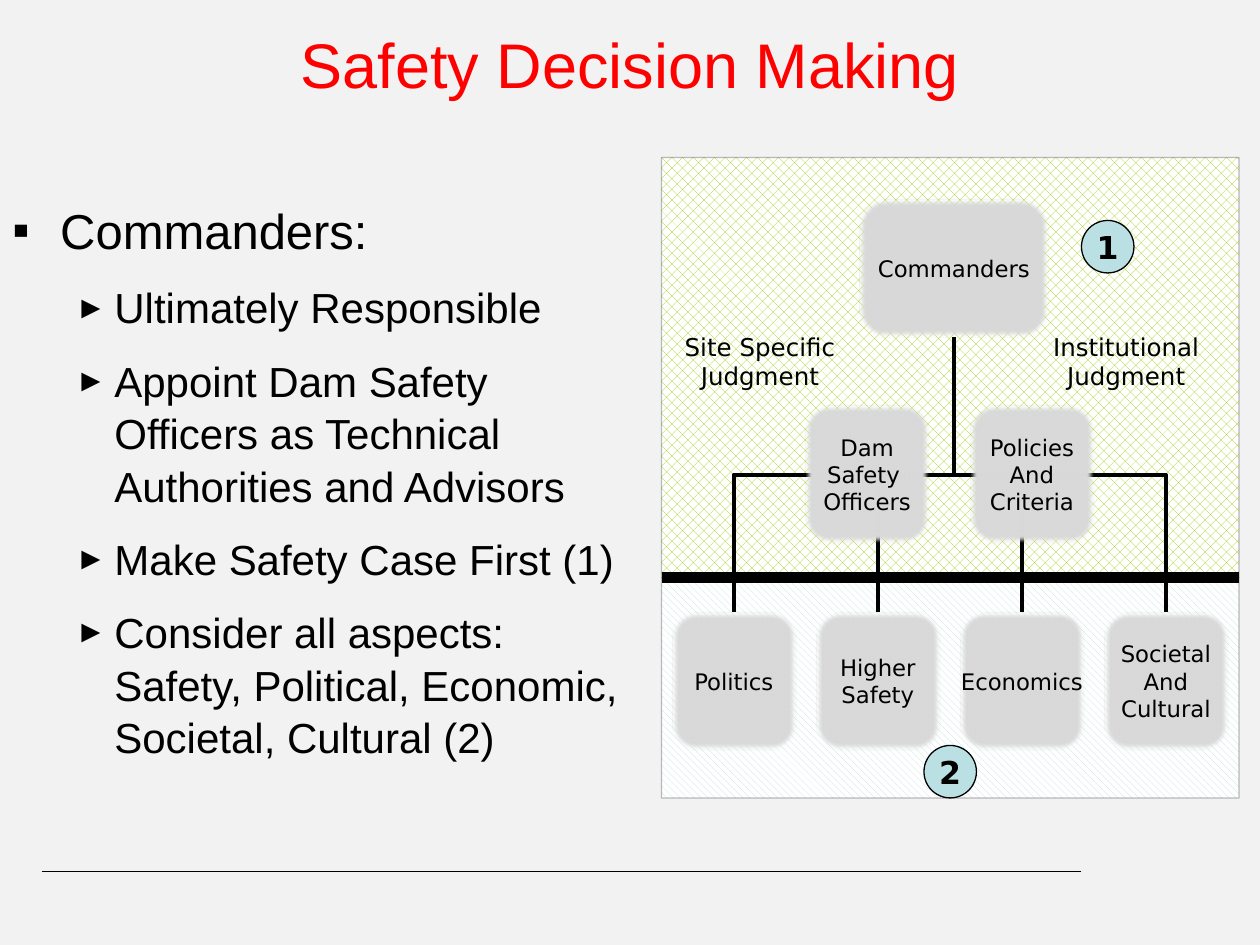
from dataclasses import dataclass

from lxml import etree
from pptx import Presentation
from pptx.dml.color import RGBColor
from pptx.enum import dml, shapes, text
from pptx.oxml import ns
from pptx.util import Inches, Pt

COLUMNS, ROWS = 120, 90
WIDTH, HEIGHT = Inches(10), Inches(7.5)
BLACK, WHITE, GREY, AQUA = "000000", "FFFFFF", "D9D9D9", "BBE0E3"
CENTER, MIDDLE = text.PP_ALIGN.CENTER, text.MSO_ANCHOR.MIDDLE


@dataclass(frozen=True)
class Area:
    col: float
    row: float
    cols: float
    rows: float

    def place(self) -> tuple:
        return x(self.col), y(self.row), x(self.cols), y(self.rows)


@dataclass(frozen=True)
class Node:
    label: str
    area: Area


@dataclass(frozen=True)
class Item:
    words: str
    size: int
    margin: float
    hang: float
    bullet: str
    bullet_size: int
    before: int


BOX_COLS, BOX_ROWS, PITCH = 11.75, 13.1, 13.72
PANEL_LEFT, PANEL_COLS, DIVIDER = 63, 55, 55
CHILD_TOP, OFFICER_TOP = 58.3, 38.64
SPINE, BUS = 90.84, 45.2

LEADER = Node("Commanders", Area(SPINE - 9, 19, 18, BOX_ROWS))
OFFICERS = [
    Node(label, Area(col, OFFICER_TOP, BOX_COLS, BOX_ROWS))
    for label, col in [("Dam\nSafety \nOfficers", 76.7), ("Policies\nAnd\nCriteria", 92.4)]
]
CHILDREN = [
    Node(label, Area(64 + index * PITCH, CHILD_TOP, BOX_COLS, BOX_ROWS))
    for index, label in enumerate(
        ["Politics", "Higher\nSafety", "Economics", "Societal\nAnd\nCultural"])
]
PANELS = [
    (Area(PANEL_LEFT, 15, PANEL_COLS, 40), "pct40", "99CC00"),
    (Area(PANEL_LEFT, DIVIDER, PANEL_COLS, 21), "wdDnDiag", AQUA),
]
MARKERS = [Node("1", Area(103, 21, 5, 5)), Node("2", Area(88, 71, 5, 5))]
CAPTIONS = [
    Node("Site Specific\nJudgment", Area(64, 31, 16.75, 6.8)),
    Node("Institutional\nJudgment", Area(99, 31, 16.5, 6.8)),
]
ITEMS = [Item("Commanders:", 28, 0.38, 0.38, "▪", 100, 0)] + [
    Item(words, 24, 0.81, 0.31, "►", 75, 12)
    for words in [
        "Ultimately Responsible",
        "Appoint Dam Safety Officers as Technical Authorities and Advisors",
        "Make Safety Case First (1)",
        "Consider all aspects: Safety, Political, Economic, Societal, Cultural (2)",
    ]
]


def x(cols: float) -> int:
    return round(WIDTH * cols / COLUMNS)


def y(rows: float) -> int:
    return round(HEIGHT * rows / ROWS)


def color(value: str) -> RGBColor:
    return RGBColor.from_string(value)


def add_child(parent, tag: str, **attributes):
    return etree.SubElement(parent, ns.qn(tag), attributes)


def write(box, words: str, *, size: int, font: str = "DejaVu Sans", tint: str = BLACK,
          bold: bool = False, wrap: bool = False, anchor=MIDDLE, inset=None) -> None:
    frame = box.text_frame
    frame.word_wrap = wrap
    frame.vertical_anchor = anchor
    if inset is not None:
        frame.margin_left = frame.margin_right = inset
        frame.margin_top = frame.margin_bottom = inset
    frame.text = words
    for para in frame.paragraphs:
        para.alignment = CENTER
        for span in para.runs:
            span.font.name, span.font.size, span.font.bold = font, Pt(size), bold
            span.font.color.rgb = color(tint)


def add_shape(page, kind, area: Area, fill: str = GREY):
    shape = page.shapes.add_shape(kind, *area.place())
    shape.shadow.inherit = False
    shape.fill.solid()
    shape.fill.fore_color.rgb = color(fill)
    shape.line.color.rgb = color(BLACK)
    shape.line.width = Pt(0.75)
    return shape


def add_panel(page, area: Area, pattern: str, tint: str) -> None:
    panel = add_shape(page, shapes.MSO_SHAPE.RECTANGLE, area)
    panel.fill.patterned()
    panel.fill.pattern = dml.MSO_PATTERN.from_xml(pattern)
    panel.fill.fore_color.rgb = color(tint)
    panel.fill.back_color.rgb = color(WHITE)
    outline = panel._element.spPr.find(ns.qn("a:ln")).find(".//" + ns.qn("a:srgbClr"))
    add_child(outline, "a:alpha", val="25000")


def add_node(page, node: Node) -> None:
    box = add_shape(page, shapes.MSO_SHAPE.ROUNDED_RECTANGLE, node.area)
    effects = box._element.spPr.find(ns.qn("a:effectLst"))
    add_child(effects, "a:softEdge", rad="31750")
    write(box, node.label, size=13, inset=0)


def add_line(page, start: tuple, end: tuple, width: float,
             kind=shapes.MSO_CONNECTOR.STRAIGHT):
    line = page.shapes.add_connector(kind, x(start[0]), y(start[1]), x(end[0]), y(end[1]))
    line.line.color.rgb = color(BLACK)
    line.line.width = Pt(width)
    add_child(line._element.spPr, "a:effectLst")
    return line


def link_officer(page, area: Area) -> None:
    side = area.col + area.cols if area.col < SPINE - area.cols else area.col
    foot = LEADER.area.row + LEADER.area.rows
    link = add_line(page, (side, BUS), (SPINE, foot), 2.25, shapes.MSO_CONNECTOR.ELBOW)
    link._element.spPr.find(ns.qn("a:prstGeom")).set("prst", "bentConnector2")


def link_child(page, area: Area) -> None:
    foot = LEADER.area.row + LEADER.area.rows
    target = area.col + area.cols / 2
    middle_col, middle_row = (SPINE + target) / 2, (foot + area.row) / 2
    drop, reach = (area.row - foot) / 2, abs(target - SPINE) / 2
    direction = -1 if target < SPINE else 1
    link = add_line(page, (middle_col + direction * drop, middle_row - reach),
                    (middle_col - direction * drop, middle_row + reach), 2.25,
                    shapes.MSO_CONNECTOR.ELBOW)
    xfrm = link._element.spPr.find(ns.qn("a:xfrm"))
    xfrm.set("flipH", "0" if direction < 0 else "1")
    xfrm.set("rot", str((90 if direction < 0 else 270) * 60000))


def add_list(page, area: Area) -> None:
    frame = page.shapes.add_textbox(*area.place()).text_frame
    frame.word_wrap = True
    for index, item in enumerate(ITEMS):
        para = frame.add_paragraph() if index else frame.paragraphs[0]
        para.space_before = Pt(item.before)
        para.line_spacing = 1.04
        props = para._p.get_or_add_pPr()
        props.set("marL", str(Inches(item.margin)))
        props.set("indent", str(-Inches(item.hang)))
        add_child(props, "a:buSzPct", val=str(item.bullet_size * 1000))
        add_child(props, "a:buFont", typeface="Arial")
        add_child(props, "a:buChar", char=item.bullet)
        span = para.add_run()
        span.text = item.words
        span.font.name, span.font.size = "Arial", Pt(item.size)
        span.font.color.rgb = color(BLACK)


def main() -> None:
    deck = Presentation()
    deck.slide_width, deck.slide_height = WIDTH, HEIGHT
    page = deck.slides.add_slide(deck.slide_layouts[6])
    page.background.fill.solid()
    page.background.fill.fore_color.rgb = color("F2F2F2")
    add_line(page, (103, 83), (4, 83), 0.75)
    for panel in PANELS:
        add_panel(page, *panel)
    title = page.shapes.add_textbox(*Area(6, 0, 108, 12).place())
    write(title, "Safety Decision Making", size=36, font="Arial", tint="FF0000", wrap=True)
    add_list(page, Area(0, 18.25, 61, 52.4))
    for node in OFFICERS:
        link_officer(page, node.area)
    for node in CHILDREN:
        link_child(page, node.area)
    for node in [LEADER, *CHILDREN, *OFFICERS]:
        add_node(page, node)
    for marker in MARKERS:
        disc = add_shape(page, shapes.MSO_SHAPE.OVAL, marker.area, AQUA)
        write(disc, marker.label, size=18, bold=True)
    for caption in CAPTIONS:
        box = page.shapes.add_textbox(*caption.area.place())
        write(box, caption.label, size=14, wrap=True, anchor=text.MSO_ANCHOR.TOP)
    add_line(page, (PANEL_LEFT, DIVIDER), (PANEL_LEFT + PANEL_COLS, DIVIDER), 6)
    deck.save("out.pptx")


if __name__ == "__main__":
    main()
